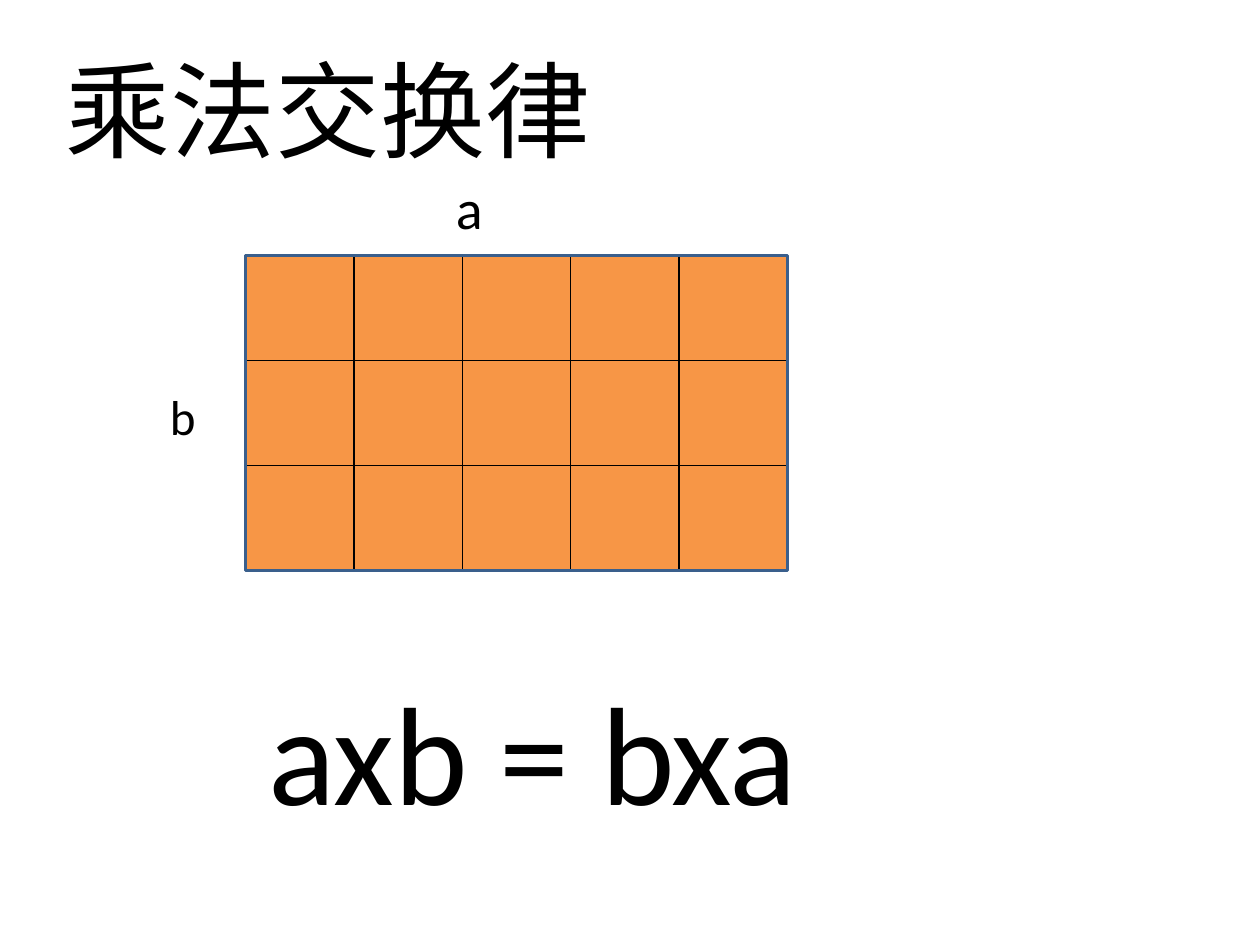
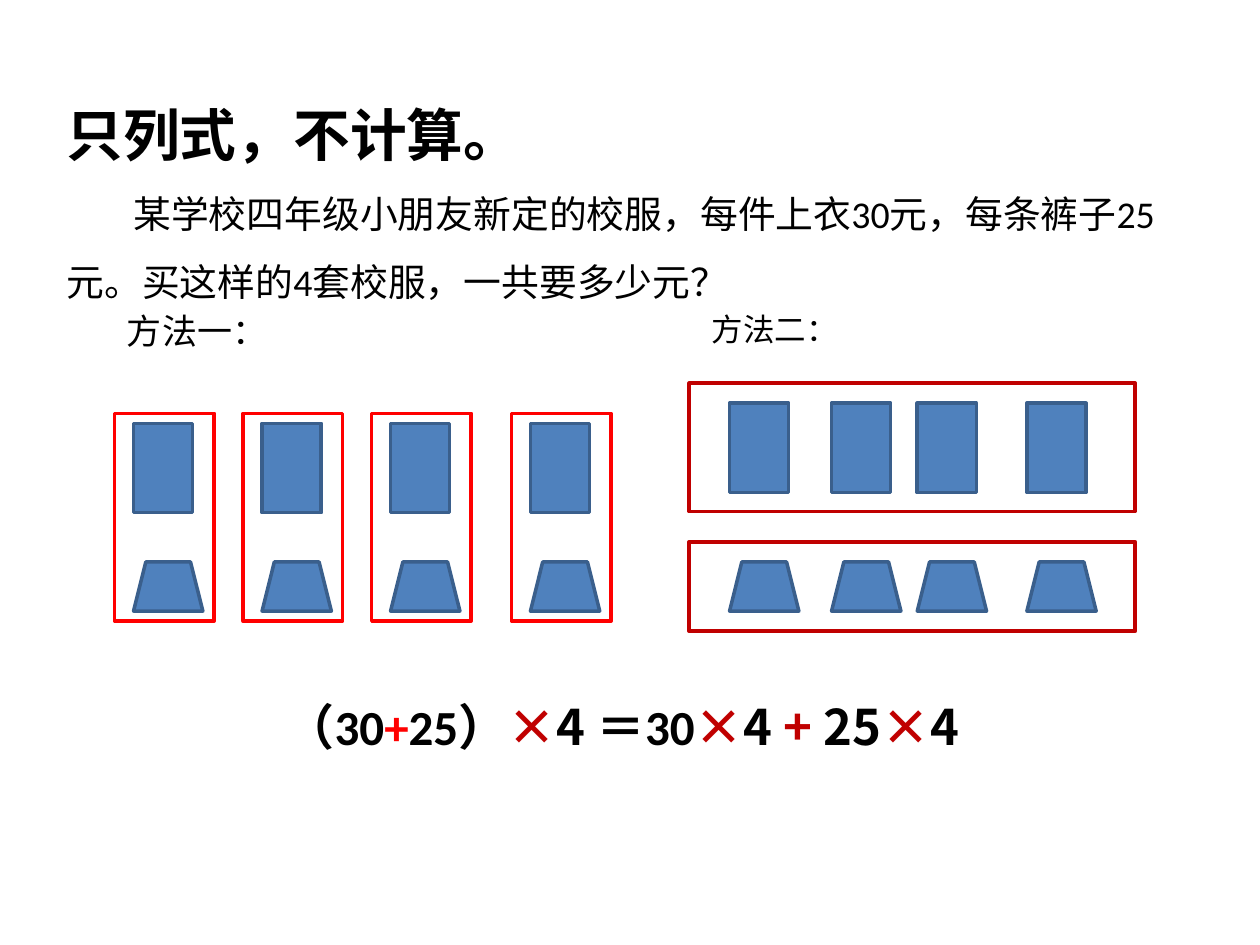
from dataclasses import dataclass

from lxml import etree
from pptx import Presentation
from pptx.dml.color import RGBColor
from pptx.enum.shapes import MSO_SHAPE
from pptx.enum.text import MSO_ANCHOR, MSO_AUTO_SIZE
from pptx.oxml.ns import qn
from pptx.util import Inches, Pt

RECTANGLE = MSO_SHAPE.RECTANGLE
TRAPEZOID = MSO_SHAPE.TRAPEZOID
MIDDLE = MSO_ANCHOR.MIDDLE
TOP = MSO_ANCHOR.TOP
GROW = MSO_AUTO_SIZE.SHAPE_TO_FIT_TEXT
FIXED = MSO_AUTO_SIZE.NONE


@dataclass(frozen=True)
class Theme:
    latin: str = "Calibri"
    chinese: str = "Noto Sans CJK SC"
    black: str = "000000"
    orange: str = "F79646"
    blue: str = "4F81BD"
    dark_blue: str = "3A5F8C"
    red: str = "FF0000"
    dark_red: str = "C00000"
    formula_size: float = 80
    headline_size: float = 60
    exercise_size: float = 32.4
    width_label_size: float = 32
    large_size: float = 28
    problem_size: float = 21.6
    first_method_size: float = 20
    second_method_size: float = 18
    outline: float = 2
    grid_line: float = 1


THEME = Theme()


def style_font(font, size, color=THEME.black, bold=False, name=THEME.latin):
    font.size = Pt(size)
    font.bold = bold
    font.name = name
    font.color.rgb = RGBColor.from_string(color)
    etree.SubElement(font._rPr, qn("a:ea"), typeface=THEME.chinese)


def set_first_indent(paragraph, indent):
    paragraph._p.get_or_add_pPr().set("indent", str(Inches(indent)))


def add_text_box(slide, box, anchor=TOP, auto_size=GROW):
    frame = slide.shapes.add_textbox(*map(Inches, box)).text_frame
    frame.word_wrap = True
    frame.auto_size = auto_size
    frame.vertical_anchor = anchor
    return frame


def add_label(slide, box, text, size, name=THEME.latin, auto_size=GROW):
    paragraph = add_text_box(slide, box, auto_size=auto_size).paragraphs[0]
    paragraph.text = text
    style_font(paragraph.font, size, name=name)
    return paragraph


def add_outlined_shape(shapes, kind, box, line, fill=None):
    shape = shapes.add_shape(kind, *map(Inches, box))
    shape.shadow.inherit = False
    shape.line.color.rgb = RGBColor.from_string(line)
    shape.line.width = Pt(THEME.outline)
    if fill:
        shape.fill.solid()
        shape.fill.fore_color.rgb = RGBColor.from_string(fill)
    else:
        shape.fill.background()


def set_cell_borders(cell):
    properties = cell._tc.get_or_add_tcPr()
    for position, side in enumerate(("lnL", "lnR", "lnT", "lnB")):
        border = etree.Element(qn(f"a:{side}"), w=str(Pt(THEME.grid_line)))
        fill = etree.SubElement(border, qn("a:solidFill"))
        etree.SubElement(fill, qn("a:srgbClr"), val=THEME.black)
        properties.insert(position, border)


def add_area_grid(slide, box, columns, rows):
    left, top, width, height = box
    table = slide.shapes.add_table(rows, columns, *map(Inches, box)).table
    table.first_row = False
    table.horz_banding = False
    for column in table.columns:
        column.width = Inches(width / columns)
    for row in table.rows:
        row.height = Inches(height / rows)
    for cell in table.iter_cells():
        cell.fill.solid()
        cell.fill.fore_color.rgb = RGBColor.from_string(THEME.orange)
        set_cell_borders(cell)
    add_outlined_shape(slide.shapes, RECTANGLE, box, THEME.dark_blue)
    add_label(slide, (left + 1.57, top - 0.7, 0.94, 0.64), "a", THEME.width_label_size)
    add_label(slide, (left - 0.7, top + 0.99, 0.39, 0.57), "b", THEME.large_size)


def add_jacket(shapes, left, top):
    add_outlined_shape(shapes, RECTANGLE, (left, top, 0.47, 0.71), THEME.dark_blue, THEME.blue)


def add_trousers(shapes, left, top):
    add_outlined_shape(shapes, TRAPEZOID, (left, top, 0.55, 0.39), THEME.dark_blue, THEME.blue)


def add_problem(slide, box):
    frame = add_text_box(slide, box, MIDDLE, FIXED)
    heading = frame.paragraphs[0]
    heading.text = "只列式，不计算。"
    style_font(heading.font, THEME.exercise_size, bold=True)
    question = frame.add_paragraph()
    question.text = (
        "某学校四年级小朋友新定的校服，每件上衣30元，每条裤子25元。"
        "买这样的4套校服，一共要多少元？"
    )
    style_font(question.font, THEME.problem_size)
    set_first_indent(question, 0.53)
    for paragraph in frame.paragraphs:
        paragraph.line_spacing = 1.5


def add_method_by_set(slide, box):
    left, top, _, _ = box
    add_label(slide, box, "方法一：", THEME.first_method_size, auto_size=FIXED)
    for offset in (0, 1.02, 2.04, 3.15):
        frame_left, frame_top = left + offset, top + 0.87
        add_outlined_shape(slide.shapes, RECTANGLE, (frame_left, frame_top, 0.79, 1.65), THEME.red)
        uniform = slide.shapes.add_group_shape().shapes
        add_jacket(uniform, frame_left + 0.15, frame_top + 0.08)
        add_trousers(uniform, frame_left + 0.15, frame_top + 1.18)


def add_method_by_garment(slide, box):
    left, top, width, _ = box
    add_label(slide, (left + 0.08, top, 2.68, 0.4), "方法二：", THEME.second_method_size)
    for offset, height in ((0.63, 1.02), (1.89, 0.71)):
        frame_box = (left, top + offset, width, height)
        add_outlined_shape(slide.shapes, RECTANGLE, frame_box, THEME.dark_red)
    garments = slide.shapes.add_group_shape().shapes
    for offset in (0.32, 1.13, 1.81, 2.68):
        add_jacket(garments, left + offset, top + 0.79)
        add_trousers(garments, left + offset, top + 2.05)


def add_equation(slide, box):
    paragraph = add_text_box(slide, box).paragraphs[0]
    for text, color, name in (
        ("（30", THEME.black, THEME.latin),
        ("+", THEME.red, THEME.latin),
        ("25）", THEME.black, THEME.latin),
        ("×", THEME.dark_red, THEME.chinese),
        ("4 ＝", THEME.black, THEME.chinese),
        ("30", THEME.black, THEME.latin),
        ("×", THEME.dark_red, THEME.chinese),
        ("4 ", THEME.black, THEME.chinese),
        ("+ ", THEME.dark_red, THEME.chinese),
        ("25", THEME.black, THEME.chinese),
        ("×", THEME.dark_red, THEME.chinese),
        ("4", THEME.black, THEME.chinese),
    ):
        run = paragraph.add_run()
        run.text = text
        style_font(run.font, THEME.large_size, color, True, name)


def build_commutative_slide(slide):
    add_area_grid(slide, (1.95, 2.03, 4.3, 2.5), columns=5, rows=3)
    add_label(slide, (2.03, 5.23, 4.69, 1.45), "axb = bxa", THEME.formula_size)
    headline = add_label(
        slide, (0.23, 0.31, 5.47, 1.11), "乘法交换律", THEME.headline_size, THEME.chinese
    )
    set_first_indent(headline, 0.19)


def build_uniform_slide(slide):
    add_problem(slide, (0.43, 0.84, 9, 1.25))
    add_method_by_set(slide, (0.91, 2.41, 8.36, 3.26))
    add_method_by_garment(slide, (5.47, 2.41, 3.54, 2.6))
    add_equation(slide, (2.17, 5.48, 7.05, 0.57))


def main():
    presentation = Presentation()
    presentation.slide_width = Inches(10)
    presentation.slide_height = Inches(7.5)
    blank = presentation.slide_layouts[6]
    for build in (build_commutative_slide, build_uniform_slide):
        build(presentation.slides.add_slide(blank))
    presentation.save("out.pptx")


if __name__ == "__main__":
    main()
